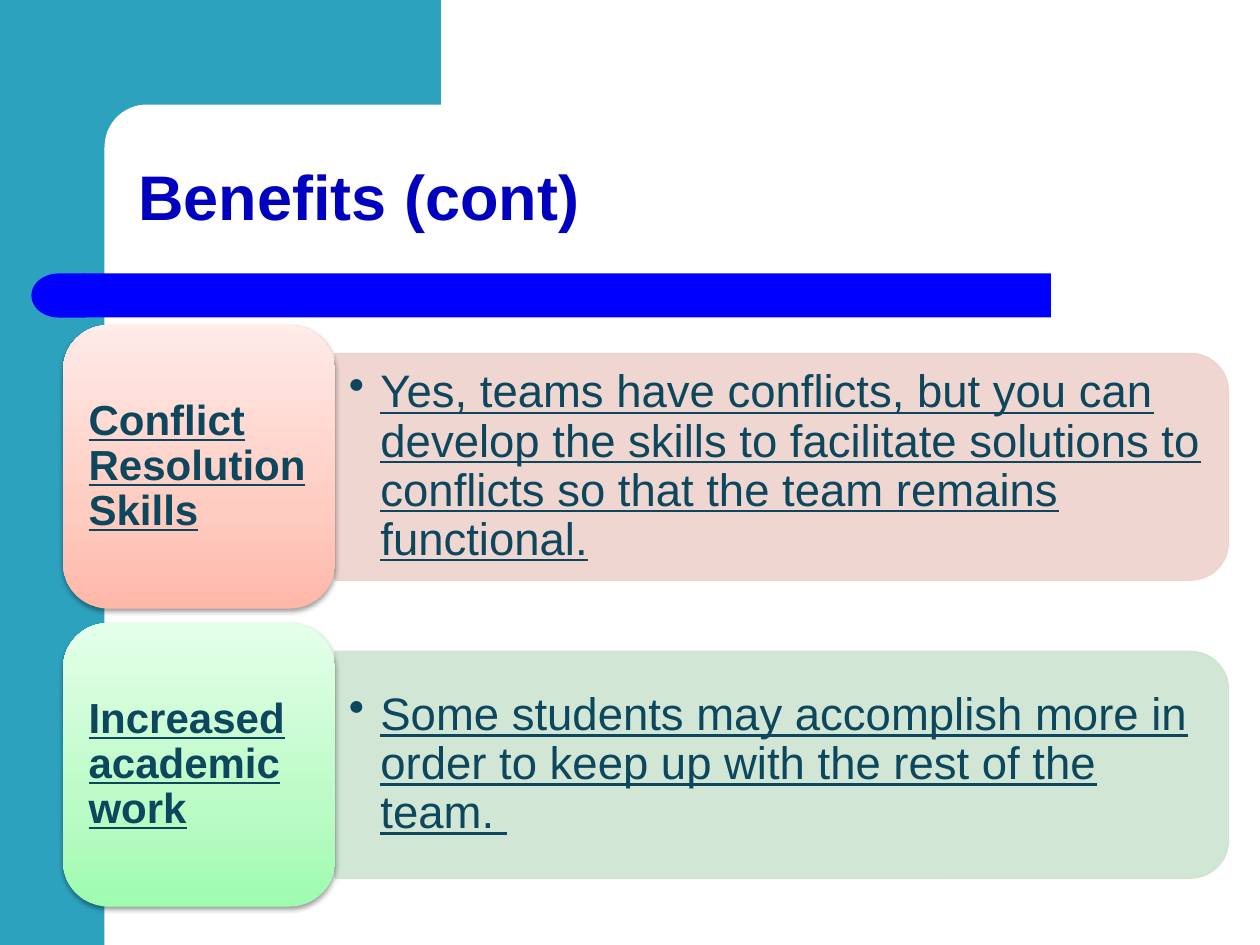
from copy import deepcopy

from lxml.etree import SubElement
from pptx import Presentation
from pptx.dml.color import RGBColor
from pptx.enum.shapes import MSO_SHAPE
from pptx.enum.text import MSO_ANCHOR, PP_ALIGN
from pptx.oxml.ns import qn
from pptx.util import Inches, Pt

TEAL, BLUE, WHITE = "2DA2BF", "0000FF", "FFFFFF"
TITLE_COLOR, TEXT_COLOR = "0000BF", "0C475D"
CARD_LEFT, CARD_WIDTH, CARD_HEIGHT = 0.5, 2.16, 2.25
FIRST_ROW_TOP, ROW_PITCH = 2.58, 2.365
PANEL_LEFT, PANEL_WIDTH, PANEL_HEIGHT = 2.66, 7.09, 1.8
BENEFITS = [
    ("Conflict Resolution Skills",
     "Yes, teams have conflicts, but you can develop the skills to facilitate "
     "solutions to conflicts so that the team remains functional.",
     "EED2CC", ("FFB7A8", "FFCCC1", "FFEBE8")),
    ("Increased academic work",
     "Some students may accomplish more in order to keep up with the rest of the team. ",
     "CCE4D0", ("9DFCAE", "BBFBC6", "E4FFE9")),
]


def color(hex_value):
    return RGBColor.from_string(hex_value)


def add_block(slide, kind, left, top, width, height, fill=None):
    block = slide.shapes.add_shape(
        kind, Inches(left), Inches(top), Inches(width), Inches(height))
    block.shadow.inherit = False
    block.line.fill.background()
    if fill:
        block.fill.solid()
        block.fill.fore_color.rgb = color(fill)
    return block


def write_text(frame, text, size, hex_value, anchor, bold=False, underline=False):
    frame.word_wrap = True
    frame.vertical_anchor = anchor
    paragraph = frame.paragraphs[0]
    paragraph.text = text
    paragraph.alignment = PP_ALIGN.LEFT
    paragraph.line_spacing = 0.9
    font = paragraph.font
    font.name, font.size, font.bold, font.underline = "Arial", Pt(size), bold, underline
    font.color.rgb = color(hex_value)
    return paragraph


def add_text(slide, left, top, width, height):
    return slide.shapes.add_textbox(
        Inches(left), Inches(top), Inches(width), Inches(height)).text_frame


def add_bullet(paragraph):
    properties = paragraph._p.get_or_add_pPr()
    properties.set("marL", str(Inches(0.25)))
    properties.set("indent", str(-Inches(0.25)))
    SubElement(properties, qn("a:buChar"), char="•")


def add_panel(slide, middle, fill):
    center = PANEL_LEFT + PANEL_WIDTH / 2
    panel = add_block(slide, MSO_SHAPE.ROUND_2_SAME_RECTANGLE,
                      center - PANEL_HEIGHT / 2, middle - PANEL_WIDTH / 2,
                      PANEL_HEIGHT, PANEL_WIDTH, fill)
    panel.rotation = 90
    panel.line.color.rgb = color(fill)
    panel.line.width = Pt(0.75)
    for tint in panel._element.spPr.iter(qn("a:srgbClr")):
        SubElement(tint, qn("a:alpha"), val="90000")


def add_card_shadow(card):
    effects = card._element.spPr.find(qn("a:effectLst"))
    shadow = SubElement(effects, qn("a:outerShdw"), blurRad=str(Pt(3.1)),
                        dist=str(Pt(1.6)), dir="5400000", rotWithShape="0")
    tint = SubElement(shadow, qn("a:srgbClr"), val="000000")
    SubElement(tint, qn("a:alpha"), val="38000")


def add_card(slide, top, label, shades):
    card = add_block(slide, MSO_SHAPE.ROUNDED_RECTANGLE,
                     CARD_LEFT, top, CARD_WIDTH, CARD_HEIGHT)
    card.fill.gradient()
    card.fill.gradient_angle = 90
    stop_list = card._element.spPr.find(".//" + qn("a:gsLst"))
    stop_list.append(deepcopy(stop_list[0]))
    for stop, position, shade in zip(card.fill.gradient_stops, (0, 0.35, 1), shades):
        stop.position = position
        stop.color.rgb = color(shade)
    add_card_shadow(card)
    write_text(card.text_frame, label, 24, TEXT_COLOR, MSO_ANCHOR.MIDDLE,
               bold=True, underline=True)


def add_benefit(slide, top, label, description, panel_fill, shades):
    middle = top + CARD_HEIGHT / 2
    add_panel(slide, middle, panel_fill)
    frame = add_text(slide, PANEL_LEFT, middle - 0.81, 7, 1.62)
    frame.margin_left = frame.margin_right = Inches(0.11)
    add_bullet(write_text(frame, description, 26, TEXT_COLOR, MSO_ANCHOR.MIDDLE,
                          underline=True))
    add_card(slide, top, label, shades)


def add_backdrop(slide):
    add_block(slide, MSO_SHAPE.RECTANGLE, 0, 0, 0.83, 7.5, TEAL)
    add_block(slide, MSO_SHAPE.RECTANGLE, 0.75, 0, 2.75, 1.17, TEAL)
    corner = add_block(slide, MSO_SHAPE.ROUNDED_RECTANGLE, 0.83, 0.83, 5.58, 0.67, WHITE)
    corner.adjustments[0] = 0.5
    add_block(slide, MSO_SHAPE.RECTANGLE, 0.67, 2.17, 7.67, 0.35, BLUE)
    bar_end = add_block(slide, MSO_SHAPE.FLOWCHART_DELAY, 0.25, 2.17, 0.43, 0.35, BLUE)
    bar_end._element.spPr.find(qn("a:xfrm")).set("flipH", "1")


def main():
    presentation = Presentation()
    presentation.slide_width, presentation.slide_height = Inches(10), Inches(7.5)
    slide = presentation.slides.add_slide(presentation.slide_layouts[6])
    add_backdrop(slide)
    write_text(add_text(slide, 1, 0.83, 8.75, 1.08), "Benefits (cont)", 36,
               TITLE_COLOR, MSO_ANCHOR.BOTTOM, bold=True)
    for row, benefit in enumerate(BENEFITS):
        add_benefit(slide, FIRST_ROW_TOP + row * ROW_PITCH, *benefit)
    presentation.save("out.pptx")


if __name__ == "__main__":
    main()
